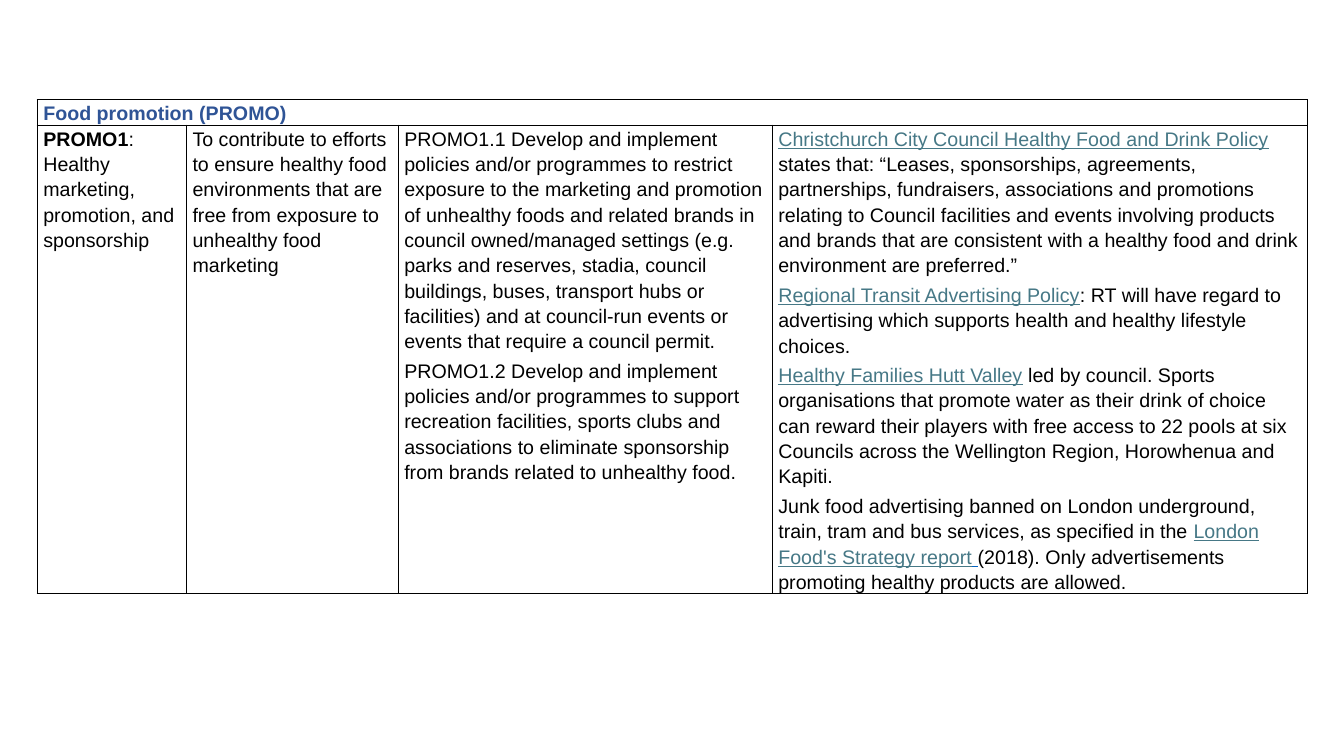
from dataclasses import dataclass
from lxml.etree import SubElement
from pptx import Presentation
from pptx.dml.color import RGBColor
from pptx.oxml.ns import qn
from pptx.util import Inches, Pt


@dataclass(frozen=True)
class Theme:
    font: str = "Arial"
    size: int = 14
    text: str = "000000"
    heading: str = "2F5496"
    link: str = "467886"
    link_gap: str = "0563C1"
    border: str = "000000"
    border_pt: int = 1
    line_spacing: float = 1.15


THEME = Theme()
LINK = {"color": THEME.link, "underline": True}
LINK_GAP = {"color": THEME.link_gap, "underline": True}
BOLD = {"bold": True}

# Each cell is a list of paragraphs; each paragraph is a list of (text, format).
HEADING = [[("Food promotion (PROMO)", {"color": THEME.heading, "bold": True})]]
TOPIC = [[("PROMO1", BOLD), (": Healthy marketing, promotion, and sponsorship", {})]]
OBJECTIVE = [[("To contribute to efforts to ensure healthy food environments that are "
               "free from exposure to unhealthy food marketing", {})]]
ACTIONS = [
    [("PROMO1.1 Develop and implement policies and/or programmes to restrict exposure to "
      "the marketing and promotion of unhealthy foods and related brands in council "
      "owned/managed settings (e.g. parks and reserves, stadia, council buildings, buses, "
      "transport hubs or facilities) and at council-run events or events that require a "
      "council permit.", {})],
    [("PROMO1.2 Develop and implement policies and/or programmes to support recreation "
      "facilities, sports clubs and associations to eliminate sponsorship from brands "
      "related to unhealthy food.", {})],
]
EXAMPLES = [
    [("Christchurch City Council Healthy Food and Drink Policy", LINK),
     (" ", LINK_GAP),
     ("states that: “Leases, sponsorships, agreements, partnerships, fundraisers, "
      "associations and promotions relating to Council facilities and events involving "
      "products and brands that are consistent with a healthy food and drink environment "
      "are preferred.”", {})],
    [("Regional Transit Advertising Policy", LINK),
     (": RT will have regard to advertising which supports health and healthy lifestyle "
      "choices.", {})],
    [("Healthy Families Hutt Valley", LINK),
     (" led by council. Sports organisations that promote water as their drink of choice "
      "can reward their players with free access to 22 pools at six Councils across the "
      "Wellington Region, Horowhenua and Kapiti.", {})],
    [("Junk food advertising banned on London underground, train, tram and bus services, "
      "as specified in the ", {}),
     ("London Food's Strategy report", LINK),
     (" ", LINK_GAP),
     ("(2018). Only advertisements promoting healthy products are allowed.", {})],
]
BODY = [TOPIC, OBJECTIVE, ACTIONS, EXAMPLES]

LEFT, TOP = 0.37, 0.99
COL_WIDTHS = [1.48, 2.1, 3.71, 5.31]
ROW_HEIGHTS = [0.15, 4.36]
SIDE_MARGIN = 0.06


def add_text(p, text, color=THEME.text, bold=False, underline=False):
    r = p.add_run()
    r.text = text
    r.font.name, r.font.size = THEME.font, Pt(THEME.size)
    r.font.bold, r.font.underline = bold, underline
    r.font.color.rgb = RGBColor.from_string(color)


def style_cell(cell):
    """Give the cell its margins, four borders and no fill."""
    cell.margin_left = cell.margin_right = Inches(SIDE_MARGIN)
    cell.margin_top = cell.margin_bottom = 0
    tc_pr = cell._tc.get_or_add_tcPr()
    for side in ("a:lnL", "a:lnR", "a:lnT", "a:lnB"):
        ln = SubElement(tc_pr, qn(side), w=str(Pt(THEME.border_pt)))
        fill = SubElement(ln, qn("a:solidFill"))
        SubElement(fill, qn("a:srgbClr"), val=THEME.border)
    cell.fill.background()


def fill_cell(cell, paragraphs, space_after):
    tf = cell.text_frame
    for i, runs in enumerate(paragraphs):
        p = tf.add_paragraph() if i else tf.paragraphs[0]
        p.line_spacing = THEME.line_spacing
        p.space_after = Pt(space_after)
        for text, fmt in runs:
            add_text(p, text, **fmt)


def main():
    prs = Presentation()
    prs.slide_width, prs.slide_height = Inches(13.33), Inches(7.5)
    s = prs.slides.add_slide(prs.slide_layouts[6])

    table = s.shapes.add_table(
        len(ROW_HEIGHTS), len(COL_WIDTHS), Inches(LEFT), Inches(TOP),
        Inches(sum(COL_WIDTHS)), Inches(sum(ROW_HEIGHTS))).table
    table.first_row = table.horz_banding = False
    for col, width in zip(table.columns, COL_WIDTHS):
        col.width = Inches(width)
    for row, height in zip(table.rows, ROW_HEIGHTS):
        row.height = Inches(height)
    for cell in table.iter_cells():
        style_cell(cell)

    heading = table.cell(0, 0)
    heading.merge(table.cell(0, len(COL_WIDTHS) - 1))
    fill_cell(heading, HEADING, space_after=8)
    for i, paragraphs in enumerate(BODY):
        fill_cell(table.cell(1, i), paragraphs, space_after=3)

    prs.save("out.pptx")


if __name__ == "__main__":
    main()
